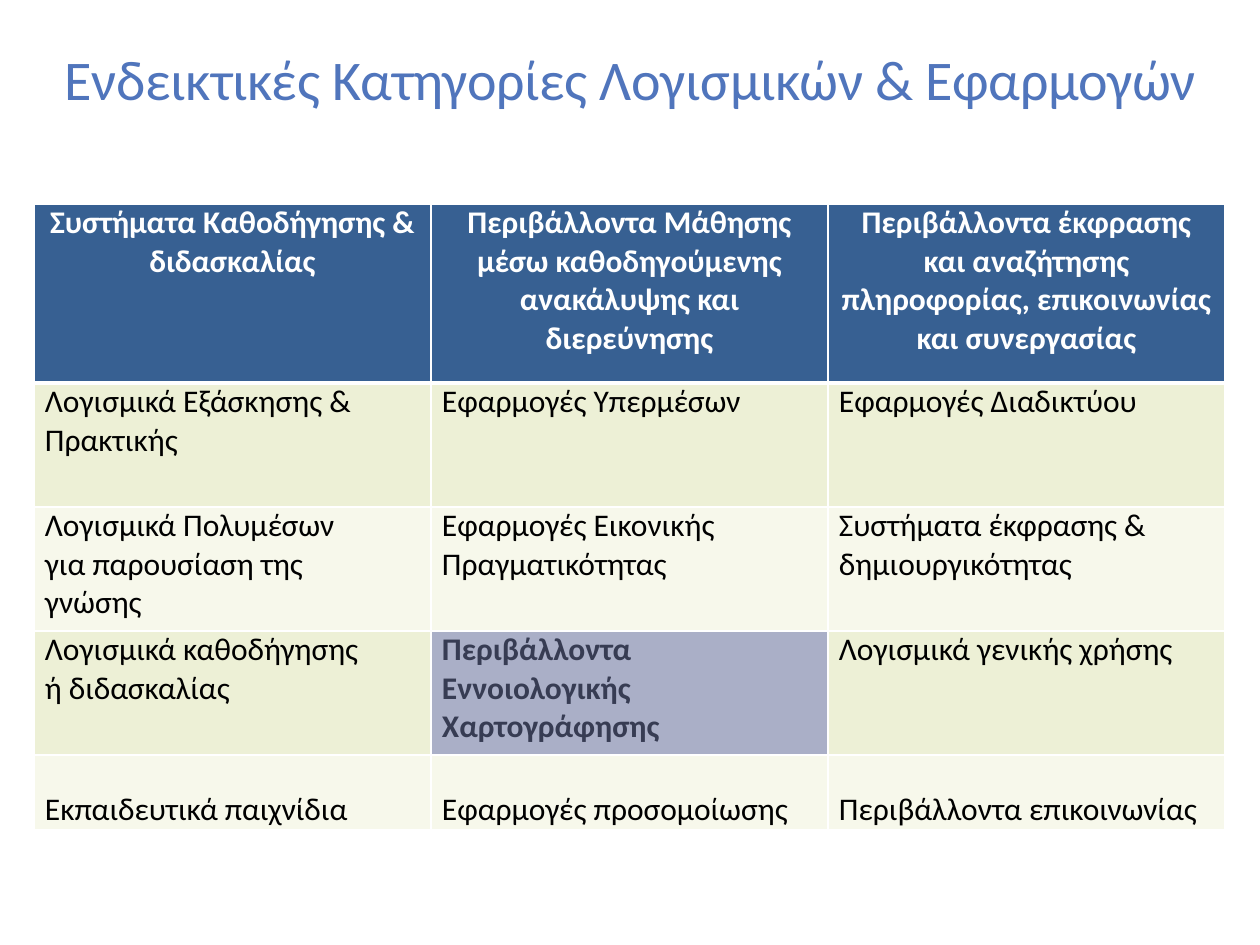
from dataclasses import dataclass

from pptx import Presentation, util as u
from pptx.dml.color import RGBColor
from pptx.enum import text
from pptx.oxml import parse_xml
from pptx.oxml.ns import nsdecls


@dataclass(frozen=True)
class Theme:
    font: str = "Calibri"
    title_size: int = 32
    body_size: int = 18
    title: str = "5075BC"
    header: str = "376092"
    bands: tuple = ("EDF0D6", "F7F8EB")
    highlight: str = "AAAFC7"
    highlight_text: str = "373C53"
    white: str = "FFFFFF"
    black: str = "000000"
    thin: int = 1
    thick: int = 3


def px(length):
    return u.Emu(round(length * 914400 / 126))


class SlideBuilder:
    """Draws titles and tables on one slide in a shared theme."""

    def __init__(self, slide, theme):
        self.slide = slide
        self.theme = theme

    def style(self, paragraph, size, color, bold=False):
        font = paragraph.font
        font.name = self.theme.font
        font.size = u.Pt(size)
        font.bold = bold
        font.color.rgb = RGBColor.from_string(color)

    def title(self, words, left, top, width, height):
        frame = self.slide.shapes.add_textbox(px(left), px(top), px(width), px(height)).text_frame
        frame.word_wrap = True
        frame.margin_left = frame.margin_right = frame.margin_top = frame.margin_bottom = 0
        paragraph = frame.paragraphs[0]
        run = paragraph.add_run()
        run.text = words
        run._r.get_or_add_rPr().set("spc", "-20")
        self.style(paragraph, self.theme.title_size, self.theme.title)

    def borders(self, cell, top, bottom):
        properties = cell._tc.get_or_add_tcPr()
        sides = {"L": self.theme.thin, "R": self.theme.thin, "T": top, "B": bottom}
        for index, (side, points) in enumerate(sides.items()):
            properties.insert(index, parse_xml(
                f'<a:ln{side} {nsdecls("a")} w="{u.Pt(points)}"><a:solidFill>'
                f'<a:srgbClr val="{self.theme.white}"/></a:solidFill></a:ln{side}>'))

    def cell(self, cell, words, fill, color, margins, bold=False, centred=False):
        cell.margin_left, cell.margin_top, cell.margin_right, cell.margin_bottom = map(px, margins)
        cell.vertical_anchor = text.MSO_ANCHOR.TOP
        cell.fill.solid()
        cell.fill.fore_color.rgb = RGBColor.from_string(fill)
        cell.text = words
        for paragraph in cell.text_frame.paragraphs:
            paragraph.alignment = text.PP_ALIGN.CENTER if centred else text.PP_ALIGN.LEFT
            self.style(paragraph, self.theme.body_size, color, bold)

    def table(self, rows, left, top, column_width, heights, header_insets, right_insets,
              last_inset, highlighted):
        theme = self.theme
        columns = len(rows[0])
        table = self.slide.shapes.add_table(
            len(rows), columns, px(left), px(top),
            px(column_width * columns), px(sum(heights))).table
        table.first_row = table.horz_banding = False
        for column in table.columns:
            column.width = px(column_width)
        for r, (row, height) in enumerate(zip(rows, heights)):
            table.rows[r].height = px(height)
            for c, words in enumerate(row):
                cell = table.cell(r, c)
                if r == 0:
                    inset = header_insets[c]
                    self.cell(cell, words, theme.header, theme.white,
                              (inset, 0, inset, 0), bold=True, centred=True)
                else:
                    marked = (r, c) == highlighted
                    top_inset = last_inset if r == len(rows) - 1 else 0
                    self.cell(cell, words,
                              theme.highlight if marked else theme.bands[(r - 1) % 2],
                              theme.highlight_text if marked else theme.black,
                              (11, top_inset, right_insets[c], 0), bold=marked)
                self.borders(cell, theme.thick if r == 1 else theme.thin,
                             theme.thick if r == 0 else theme.thin)


ROWS = [
    ("Συστήματα Καθοδήγησης &\nδιδασκαλίας",
     "Περιβάλλοντα Μάθησης μέσω καθοδηγούμενης ανακάλυψης και διερεύνησης",
     "Περιβάλλοντα έκφρασης και αναζήτησης πληροφορίας, επικοινωνίας και συνεργασίας"),
    ("Λογισμικά Εξάσκησης & Πρακτικής", "Εφαρμογές Υπερμέσων", "Εφαρμογές Διαδικτύου"),
    ("Λογισμικά Πολυμέσων για παρουσίαση της γνώσης",
     "Εφαρμογές Εικονικής Πραγματικότητας",
     "Συστήματα έκφρασης & δημιουργικότητας"),
    ("Λογισμικά καθοδήγησης ή διδασκαλίας",
     "Περιβάλλοντα Εννοιολογικής Χαρτογράφησης",
     "Λογισμικά γενικής χρήσης"),
    ("Εκπαιδευτικά παιχνίδια", "Εφαρμογές προσομοίωσης", "Περιβάλλοντα επικοινωνίας"),
]


def main():
    presentation = Presentation()
    presentation.slide_width = px(1260)
    presentation.slide_height = px(945)
    slide = presentation.slides.add_slide(presentation.slide_layouts[6])
    builder = SlideBuilder(slide, Theme())
    builder.title("Ενδεικτικές Κατηγορίες Λογισμικών & Εφαρμογών", 65, 45, 1171, 68)
    builder.table(ROWS, left=34, top=204, column_width=397, heights=(179, 124, 124, 124, 75),
                  header_insets=(6, 28, 10), right_insets=(55, 30, 10),
                  last_inset=36, highlighted=(3, 1))
    presentation.save("out.pptx")


if __name__ == "__main__":
    main()
